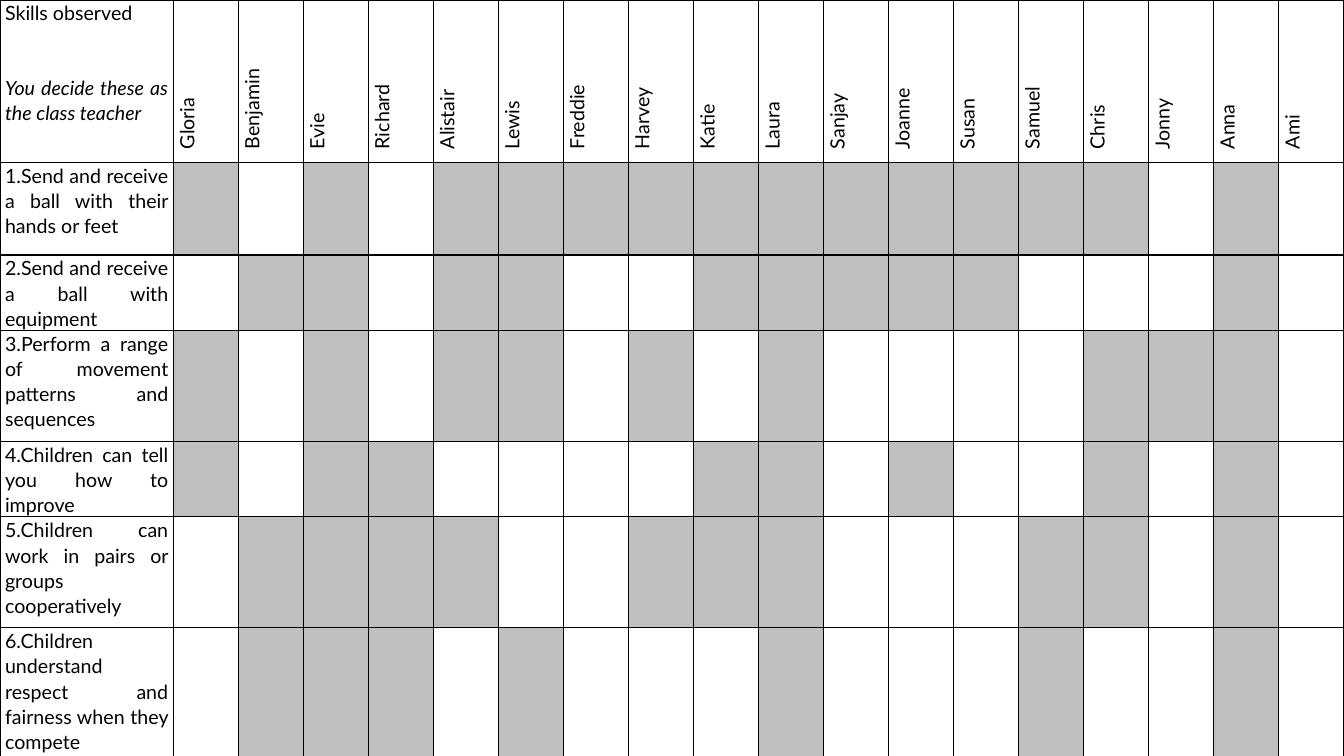
from dataclasses import dataclass

import pptx
import pptx.dml.color
import pptx.enum.text
import pptx.oxml
import pptx.oxml.ns
import pptx.util
from pptx.util import Inches

FONT, SIZE = "Lato", 14
BLACK, GREY = "000000", "BFBFBF"
SKILL_WIDTH, SLIDE_WIDTH = 1.72, 13.33
HEADER_HEIGHT = 1.61

PUPILS = [
    "Gloria", "Benjamin", "Evie", "Richard", "Alistair", "Lewis",
    "Freddie", "Harvey", "Katie", "Laura", "Sanjay", "Joanne",
    "Susan", "Samuel", "Chris", "Jonny", "Anna", "Ami",
]


@dataclass
class Skill:
    text: str
    height: float
    achieved: str  # one mark per pupil, "#" where the skill was seen


SKILLS = [
    Skill("1.Send and receive a ball with their hands or feet", 0.92, "#.#.###########.#."),
    Skill("2.Send and receive a ball with equipment", 0.74, ".##.##..#####...#."),
    Skill("3.Perform a range of movement patterns and sequences", 1.1, "#.#.##.#.#....###."),
    Skill("4.Children can tell you how to improve", 0.74, "#.##....##.#..#.#."),
    Skill("5.Children can work in pairs or groups cooperatively", 1.1, ".####..###...##.#."),
    Skill("6.Children understand respect and fairness when they compete", 1.29,
          ".###.#...#...#..#."),
]


def rgb(colour: str) -> pptx.dml.color.RGBColor:
    return pptx.dml.color.RGBColor.from_string(colour)


def format_paragraph(p, text: str, space_after: float = 8, italic: bool = False) -> None:
    p.text = text
    p.alignment = pptx.enum.text.PP_ALIGN.JUSTIFY
    p.line_spacing = 1.07
    p.space_after = pptx.util.Pt(space_after)
    p.font.name = FONT
    p.font.size = pptx.util.Pt(SIZE)
    p.font.italic = italic
    p.font.color.rgb = rgb(BLACK)


def format_cell(cell, filled: bool = False) -> None:
    cell.margin_left = cell.margin_right = Inches(0.05)
    cell.margin_top = cell.margin_bottom = 0
    if filled:
        cell.fill.solid()
        cell.fill.fore_color.rgb = rgb(GREY)
    else:
        cell.fill.background()
    # Borders come before the fill in the cell properties
    tcPr = cell._tc.get_or_add_tcPr()
    for i, side in enumerate("LRTB"):
        tcPr.insert(i, pptx.oxml.parse_xml(
            f'<a:ln{side} {pptx.oxml.ns.nsdecls("a")} w="{pptx.util.Pt(1)}">'
            f'<a:solidFill><a:srgbClr val="{BLACK}"/></a:solidFill></a:ln{side}>'))


def write_pupil(cell, name: str) -> None:
    p = cell.text_frame.paragraphs[0]
    format_paragraph(p, name)
    p._p.get_or_add_pPr().set("marL", str(Inches(0.08)))
    cell._tc.get_or_add_tcPr().set("vert", "vert270")


def main() -> None:
    prs = pptx.Presentation()
    prs.slide_width, prs.slide_height = Inches(SLIDE_WIDTH), Inches(7.5)
    s = prs.slides.add_slide(prs.slide_layouts[6])

    # Table size
    heights = [HEADER_HEIGHT] + [skill.height for skill in SKILLS]
    table = s.shapes.add_table(len(heights), len(PUPILS) + 1, 0, 0,
                               Inches(SLIDE_WIDTH), Inches(sum(heights))).table
    table.horz_banding = False
    for row, height in zip(table.rows, heights):
        row.height = Inches(height)
    pupil_width = (SLIDE_WIDTH - SKILL_WIDTH) / len(PUPILS)
    for i, column in enumerate(table.columns):
        column.width = Inches(pupil_width if i else SKILL_WIDTH)

    # Header row
    corner = table.cell(0, 0)
    format_cell(corner)
    tf = corner.text_frame
    format_paragraph(tf.paragraphs[0], "Skills observed", space_after=35)
    format_paragraph(tf.add_paragraph(), "You decide these as the class teacher", italic=True)
    for column, name in enumerate(PUPILS, 1):
        format_cell(table.cell(0, column))
        write_pupil(table.cell(0, column), name)

    # One row per skill
    for row, skill in enumerate(SKILLS, 1):
        label = table.cell(row, 0)
        format_cell(label)
        format_paragraph(label.text_frame.paragraphs[0], skill.text)
        for column, mark in enumerate(skill.achieved, 1):
            format_cell(table.cell(row, column), mark == "#")

    prs.save("out.pptx")


if __name__ == "__main__":
    main()
